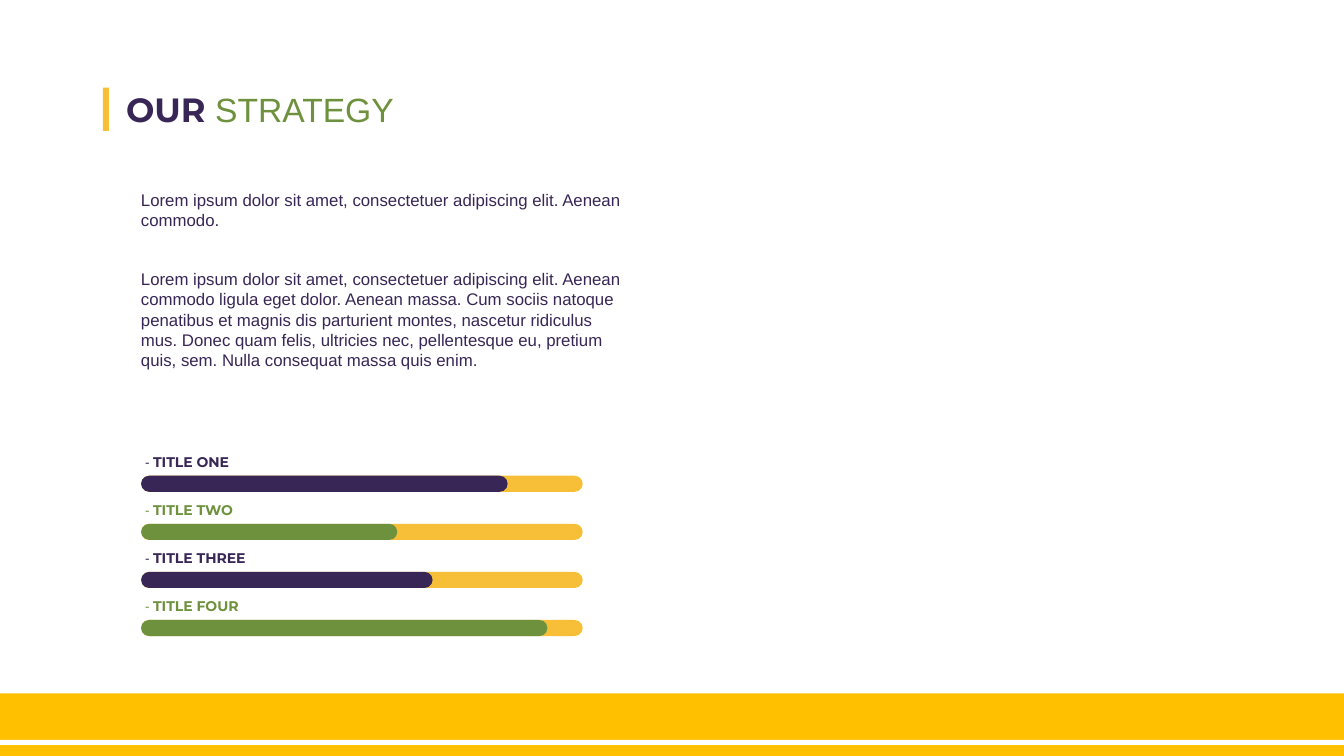
import pptx
import pptx.util
import pptx.dml.color
import pptx.enum.shapes
import pptx.enum.text

HUE = {"plum": "382656", "green": "6E913E", "gold": "F7BF37",
       "amber": "FFC000", "white": "FFFFFF"}
KIND = pptx.enum.shapes.MSO_SHAPE

deck = pptx.Presentation()
deck.slide_width = pptx.util.Inches(13.33)
deck.slide_height = pptx.util.Inches(7.5)
slide = deck.slides.add_slide(deck.slide_layouts[5])

# Grid of 100 columns by 100 rows
COL = deck.slide_width / 100
ROW = deck.slide_height / 100


def block(kind, x, y, w, h, hue):
    shape = slide.shapes.add_shape(
        kind, int(x * COL), int(y * ROW), int(w * COL), int(h * ROW))
    shape.shadow.inherit = False
    shape.fill.solid()
    shape.fill.fore_color.rgb = pptx.dml.color.RGBColor.from_string(HUE[hue])
    shape.line.fill.background()
    return shape


def write(para, text, face, size, hue, bold=False):
    para.alignment = pptx.enum.text.PP_ALIGN.LEFT
    run = para.add_run()
    run.text = text
    run.font.name = face
    run.font.size = pptx.util.Pt(size)
    run.font.bold = bold
    run.font.color.rgb = pptx.dml.color.RGBColor.from_string(HUE[hue])


# Footer band with its thin stripe
block(KIND.RECTANGLE, 0, 91.73, 100, 8.27, "amber")
block(KIND.RECTANGLE, 0, 97.87, 100, 0.67, "white")

# Title and accent
block(KIND.RECTANGLE, 7.65, 11.6, 0.45, 5.73, "gold")
title = slide.shapes.title
title.left, title.top = int(8.63 * COL), int(11.07 * ROW)
title.width, title.height = int(22.5 * COL), int(6.67 * ROW)
frame = title.text_frame
frame.word_wrap = True
frame.auto_size = pptx.enum.text.MSO_AUTO_SIZE.NONE
frame.vertical_anchor = pptx.enum.text.MSO_ANCHOR.MIDDLE
write(frame.paragraphs[0], "OUR ", "Montserrat", 24, "plum", True)
write(frame.paragraphs[0], "STRATEGY", "Arial", 24, "green")

# Body text
body = slide.shapes.add_textbox(
    int(9.75 * COL), int(24.4 * ROW), int(37.43 * COL), int(28.27 * ROW))
frame = body.text_frame
frame.word_wrap = True
write(frame.paragraphs[0],
      "Lorem ipsum dolor sit amet, consectetuer adipiscing elit. "
      "Aenean commodo.", "Arial", 12, "plum")
para = frame.add_paragraph()
para.space_before = pptx.util.Pt(28)
write(para,
      "Lorem ipsum dolor sit amet, consectetuer adipiscing elit. Aenean "
      "commodo ligula eget dolor. Aenean massa. Cum sociis natoque penatibus "
      "et magnis dis parturient montes, nascetur ridiculus mus. Donec quam "
      "felis, ultricies nec, pellentesque eu, pretium quis, sem. Nulla "
      "consequat massa quis enim.", "Arial", 12, "plum")

# Progress bars: label, full track, filled share
LEFT, TOP, STEP, WIDE, HIGH = 10.5, 62.93, 6.36, 32.86, 2.13
goals = [("TITLE ONE", 0.83, "plum"), ("TITLE TWO", 0.58, "green"),
         ("TITLE THREE", 0.66, "plum"), ("TITLE FOUR", 0.92, "green")]
for i, (name, share, hue) in enumerate(goals):
    y = TOP + i * STEP
    for part, tint in ((1, "gold"), (share, hue)):
        bar = block(KIND.ROUNDED_RECTANGLE, LEFT, y, WIDE * part, HIGH, tint)
        bar.adjustments[0] = 0.5
    label = slide.shapes.add_textbox(
        int((LEFT - 0.45) * COL), int((y - 3.6) * ROW),
        int(12 * COL), int(3.6 * ROW))
    label.text_frame.word_wrap = True
    para = label.text_frame.paragraphs[0]
    write(para, "- ", "Open Sans", 10, hue)
    write(para, name, "Montserrat", 10, hue, True)

deck.save("out.pptx")
